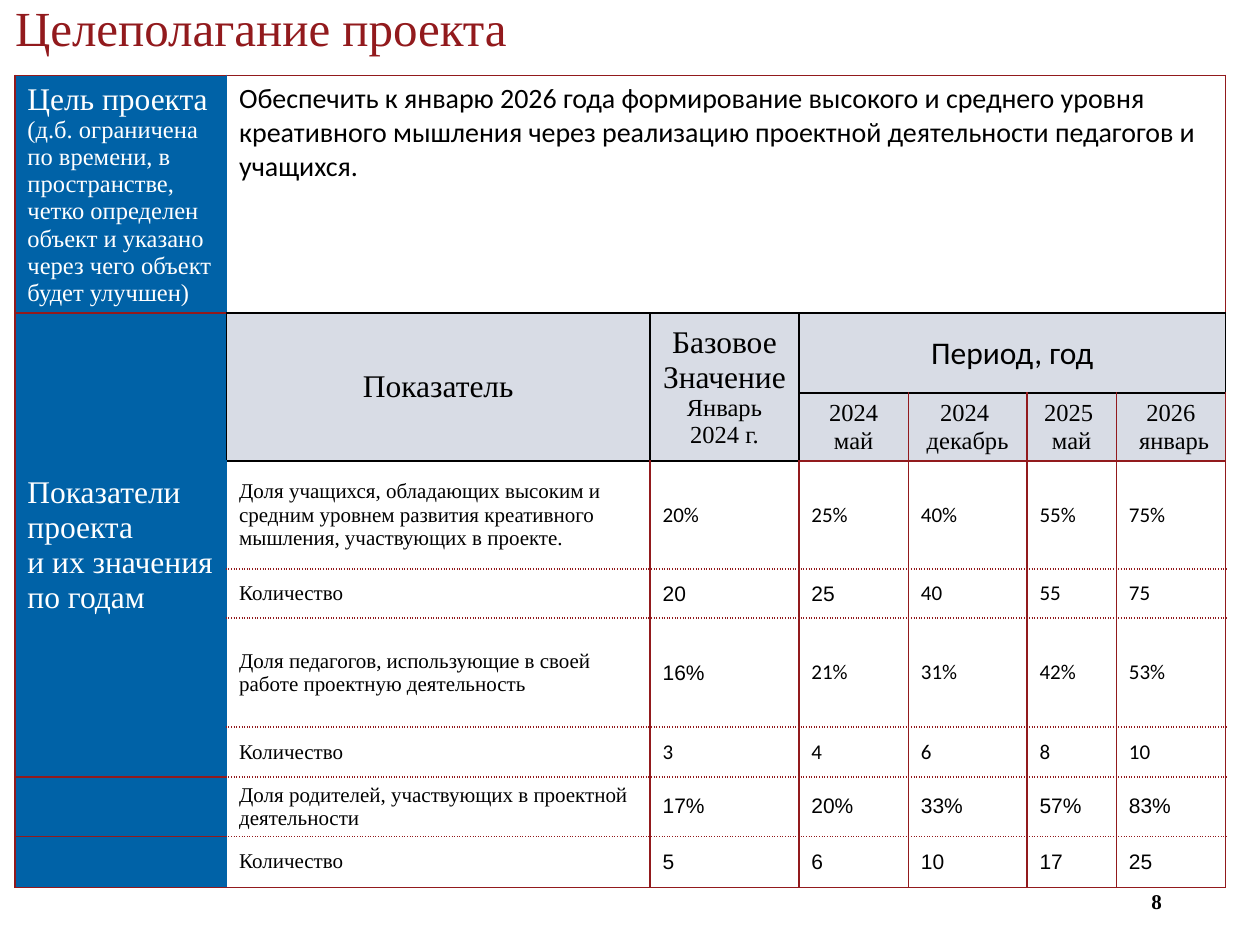
from lxml import etree
from pptx import Presentation
from pptx.dml.color import RGBColor
from pptx.enum.text import MSO_ANCHOR, MSO_AUTO_SIZE, PP_ALIGN
from pptx.oxml.ns import qn
from pptx.util import Pt

LEFT, MID, RIGHT = PP_ALIGN.LEFT, PP_ALIGN.CENTER, PP_ALIGN.RIGHT
TOP, CORE = MSO_ANCHOR.TOP, MSO_ANCHOR.MIDDLE
FIXED = MSO_AUTO_SIZE.NONE
RED = RGBColor(0x92, 0x1A, 0x1D)
BLUE = RGBColor(0x00, 0x62, 0xA7)
GREY = RGBColor(0xD8, 0xDC, 0xE5)
WHITE = RGBColor(0xFF, 0xFF, 0xFF)
BLACK = RGBColor(0x00, 0x00, 0x00)
TIMES, SANS, ARIAL = "Times New Roman", "Calibri", "Arial"

COLS = [121, 242, 85, 62.6, 67.8, 51.1, 62.5]
ROWS = [136, 45.7, 38.9, 61.7, 28, 62.3, 28.5, 33.7, 28.5]
SPANS = [(0, 1, 0, 6), (1, 0, 6, 0), (1, 1, 2, 1), (1, 2, 2, 2), (1, 3, 1, 6)]
GOAL = ("Обеспечить к январю 2026 года формирование высокого и среднего уровня "
        "креативного мышления через реализацию проектной деятельности педагогов "
        "и учащихся.")
HINT = ("(д.б. ограничена по времени, в пространстве, четко определен объект и "
        "указано через чего объект будет улучшен)")
DATES = [("2024", "май"), ("2024 ", "декабрь"), ("2025 ", "май"), ("2026", " январь")]
COUNT = "Количество"
DATA = [
    ("Доля учащихся, обладающих высоким и средним уровнем развития креативного "
     "мышления, участвующих в проекте.", 0, ["20%", "25%", "40%", "55%", "75%"]),
    (COUNT, 2, ["20", "25", "40", "55", "75"]),
    ("Доля педагогов, использующие в своей работе проектную деятельность", 1,
     ["16%", "21%", "31%", "42%", "53%"]),
    (COUNT, 0, ["3", "4", "6", "8", "10"]),
    ("Доля родителей, участвующих в проектной деятельности", 5,
     ["17%", "20%", "33%", "57%", "83%"]),
    (COUNT, 5, ["5", "6", "10", "17", "25"]),
]


def side(x, row):
    """Return the colour of vertical grid line x beside a row."""
    if (row == 1 and x > 0) or (row == 2 and 1 <= x <= 3):
        return BLACK
    return BLUE if x == 1 else RED


def level(y, col):
    """Return the colour and dash of horizontal grid line y along a column."""
    if col == 0:
        return RED, "solid"
    if y in (1, 2) or (y == 3 and col < 3):
        return BLACK, "solid"
    return RED, "sysDot" if 3 < y < len(ROWS) else "solid"


class Deck:
    """Hold the text style and the current slide."""

    def __init__(self):
        """Start a deck with one titled slide."""
        self.deck = Presentation()
        self.deck.slide_width, self.deck.slide_height = Pt(720), Pt(540)
        self.slide = self.deck.slides.add_slide(self.deck.slide_layouts[5])
        self.style = {"name": TIMES, "size": 18, "color": BLACK, "bold": False}

    def words(self, frame, lines, align=LEFT, space=1.0, **look):
        """Fill a frame with lines, each a string or a (string, size) pair."""
        for i, line in enumerate(lines):
            text, size = line if isinstance(line, tuple) else (line, None)
            para = frame.add_paragraph() if i else frame.paragraphs[0]
            para.alignment, para.line_spacing = align, space
            run = para.add_run()
            run.text = text
            form = {**self.style, **look}
            form["size"] = Pt(size or form["size"])
            run.font.color.rgb = form.pop("color")
            for key, value in form.items():
                setattr(run.font, key, value)

    def frame(self, shape, box, text, **look):
        """Place a text shape and set its text."""
        for key, value in zip(("left", "top", "width", "height"), box):
            setattr(shape, key, Pt(value))
        form = {"word_wrap": True, "auto_size": FIXED, "vertical_anchor": CORE}
        for key, value in form.items():
            setattr(shape.text_frame, key, value)
        self.words(shape.text_frame, [text], **look)

    def title(self, box, text, **look):
        """Format the title placeholder."""
        self.frame(self.slide.shapes.title, box, text, **look)

    def label(self, box, text, **look):
        """Add a text box."""
        shape = self.slide.shapes.add_textbox(*map(Pt, box))
        self.frame(shape, box, text, **look)

    def edge(self, cell, tag, color, dash, spot):
        """Draw one border of a cell."""
        line = etree.Element(qn("a:" + tag), w=str(Pt(1)))
        fill = etree.SubElement(line, qn("a:solidFill"))
        etree.SubElement(fill, qn("a:srgbClr"), val=str(color))
        etree.SubElement(line, qn("a:prstDash"), val=dash)
        cell._tc.get_or_add_tcPr().insert(spot, line)

    def grid(self, left, top):
        """Add the table with its spans, fills and borders."""
        shape = self.slide.shapes.add_table(
            len(ROWS), len(COLS), Pt(left), Pt(top), Pt(sum(COLS)), Pt(sum(ROWS)))
        table = shape.table
        table.first_row = table.horz_banding = False
        for col, width in zip(table.columns, COLS):
            col.width = Pt(width)
        for row, height in zip(table.rows, ROWS):
            row.height = Pt(height)
        for r in range(len(ROWS)):
            for c in range(len(COLS)):
                cell = table.cell(r, c)
                cell.vertical_anchor = TOP if (r, c) == (0, 1) else CORE
                cell.fill.solid()
                cell.fill.fore_color.rgb = (
                    BLUE if c == 0 else GREY if r in (1, 2) else WHITE)
                edges = {"lnL": (side(c, r), "solid"),
                         "lnR": (side(c + 1, r), "solid"),
                         "lnT": level(r, c), "lnB": level(r + 1, c)}
                for spot, (tag, (color, dash)) in enumerate(edges.items()):
                    self.edge(cell, tag, color, dash, spot)
        for r, c, end, last in SPANS:
            table.cell(r, c).merge(table.cell(end, last))
        return table

    def fill(self, table):
        """Set the goal, the headings and the values."""
        def put(r, c, *lines, **look):
            self.words(table.cell(r, c).text_frame, lines, **look)

        put(0, 0, "Цель проекта", (HINT, 14), color=WHITE)
        put(0, 1, GOAL, name=SANS, size=16)
        put(1, 0, "Показатели", "проекта", "и их значения", "по годам", color=WHITE)
        put(1, 1, "Показатель", align=MID)
        put(1, 2, "Базовое", "Значение", ("Январь 2024 г.", 14), align=MID)
        put(1, 3, "Период, год", align=MID, name=SANS)
        for c, date in enumerate(DATES, 3):
            put(2, c, *date, align=MID, size=14)
        for r, (text, count, values) in enumerate(DATA, 3):
            put(r, 1, text, size=12)
            for i, value in enumerate(values):
                put(r, i + 2, value, size=12, name=ARIAL if i < count else SANS)


def main():
    """Build and save the slide."""
    deck = Deck()
    deck.label((509, 500.4, 162, 28.8), "8", align=RIGHT, size=12, bold=True)
    deck.fill(deck.grid(8.5, 43))
    deck.title((1.4, 3.6, 533, 28), "Целеполагание проекта",
               space=0.9, size=28, color=RED)
    deck.deck.save("out.pptx")


if __name__ == "__main__":
    main()
